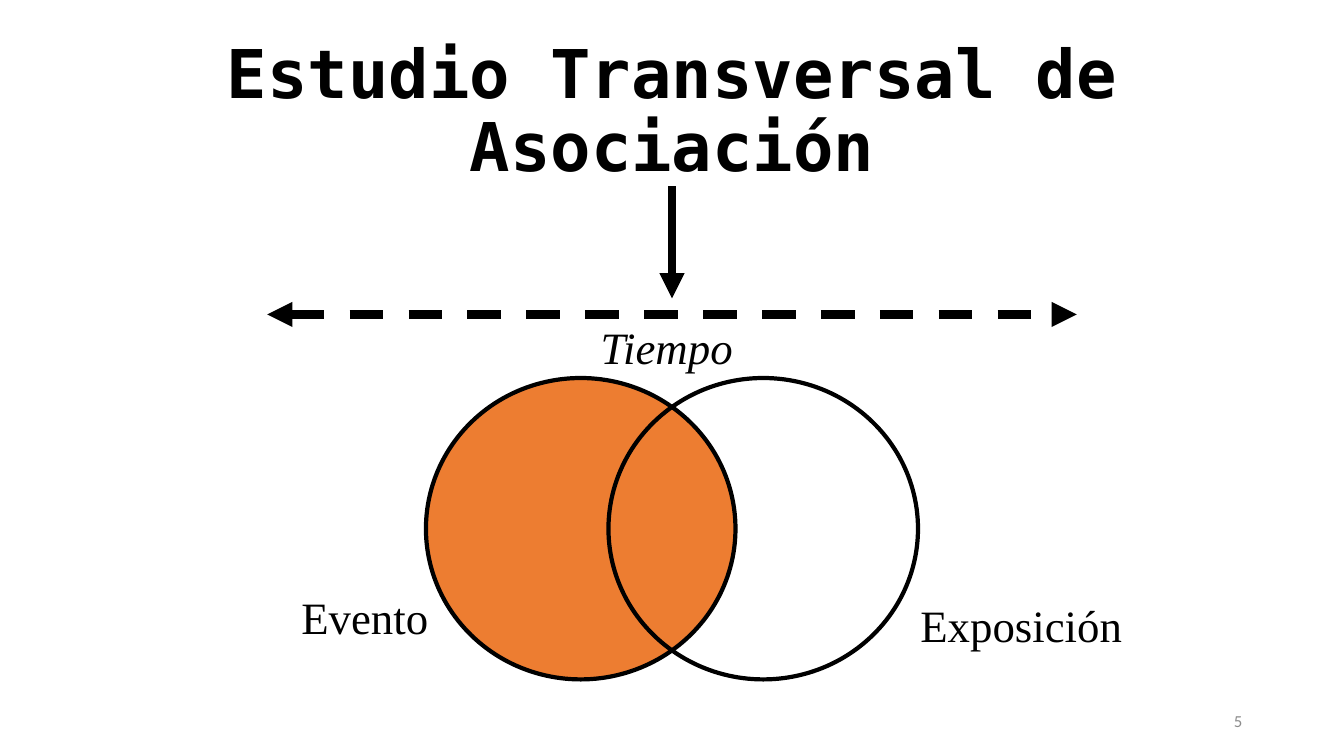
from pptx import Presentation
from pptx.dml.color import RGBColor
from pptx.enum.dml import MSO_LINE
from pptx.enum.shapes import MSO_CONNECTOR, MSO_SHAPE
from pptx.enum.text import MSO_ANCHOR, PP_ALIGN
from pptx.oxml.ns import qn
from pptx.util import Inches, Pt
from lxml.etree import SubElement

BLACK = RGBColor(0x00, 0x00, 0x00)
GREY = RGBColor(0x8C, 0x8C, 0x8C)
ORANGE = RGBColor(0xED, 0x7D, 0x31)

prs = Presentation()
prs.slide_width, prs.slide_height = Inches(13.33), Inches(7.5)
s = prs.slides.add_slide(prs.slide_layouts[6])
center = 13.33 / 2


def add_text(text, x, y, w, h, size=32, font="Times New Roman", color=BLACK,
             bold=False, italic=False, align=PP_ALIGN.LEFT,
             anchor=MSO_ANCHOR.TOP, spacing=1.0):
    sp = s.shapes.add_textbox(Inches(x), Inches(y), Inches(w), Inches(h))
    tf = sp.text_frame
    tf.word_wrap = True
    tf.vertical_anchor = anchor
    p = tf.paragraphs[0]
    p.alignment = align
    p.line_spacing = spacing
    r = p.add_run()
    r.text = text
    r.font.name = font
    r.font.size = Pt(size)
    r.font.bold = bold
    r.font.italic = italic
    r.font.color.rgb = color
    return sp


def add_arrow(x1, y1, x2, y2, ends, dash=None):
    """Draw a thick line with a triangle at each end named in ends."""
    line = s.shapes.add_connector(MSO_CONNECTOR.STRAIGHT, Inches(x1), Inches(y1),
                                  Inches(x2), Inches(y2))
    line.line.color.rgb = BLACK
    line.line.width = Pt(6)
    if dash:
        line.line.dash_style = dash
    ln = line.line._get_or_add_ln()
    for end in ends:
        SubElement(ln, qn(f"a:{end}"), type="triangle")
    SubElement(line._element.spPr, qn("a:effectLst"))
    return line


add_text("5", 9.42, 6.95, 3, 0.4, size=12, font="Calibri", color=GREY,
         align=PP_ALIGN.RIGHT, anchor=MSO_ANCHOR.MIDDLE)
title = add_text("Estudio Transversal de Asociación", center - 5.75, 0.4, 11.5, 1.45,
                 size=48, font="DejaVu Sans Mono", bold=True, spacing=0.9,
                 align=PP_ALIGN.CENTER, anchor=MSO_ANCHOR.MIDDLE)

# Time axis and the single moment of measurement
time_y = 3.12
add_arrow(2.65, time_y, 10.68, time_y, ["headEnd", "tailEnd"], MSO_LINE.DASH)
add_text("Tiempo", 5.86, time_y, 1.61, 0.63, italic=True)
moment = add_arrow(center, 1.85, center, 2.96, ["tailEnd"])
moment.begin_connect(title, 2)

# Overlapping sets, mirrored about the centre
set_w, set_h, offset = 3.07, 2.99, 0.905
for side, fill in ((-1, ORANGE), (1, None)):
    left = center + side * offset - set_w / 2
    sp = s.shapes.add_shape(MSO_SHAPE.OVAL, Inches(left), Inches(3.75),
                            Inches(set_w), Inches(set_h))
    sp.shadow.inherit = False
    sp.line.color.rgb = BLACK
    sp.line.width = Pt(3)
    if fill:
        sp.fill.solid()
        sp.fill.fore_color.rgb = fill
    else:
        sp.fill.background()

add_text("Evento", 2.89, 5.8, 1.5, 0.63)
add_text("Exposición", 9.03, 5.88, 2.28, 0.63)

prs.save("out.pptx")
